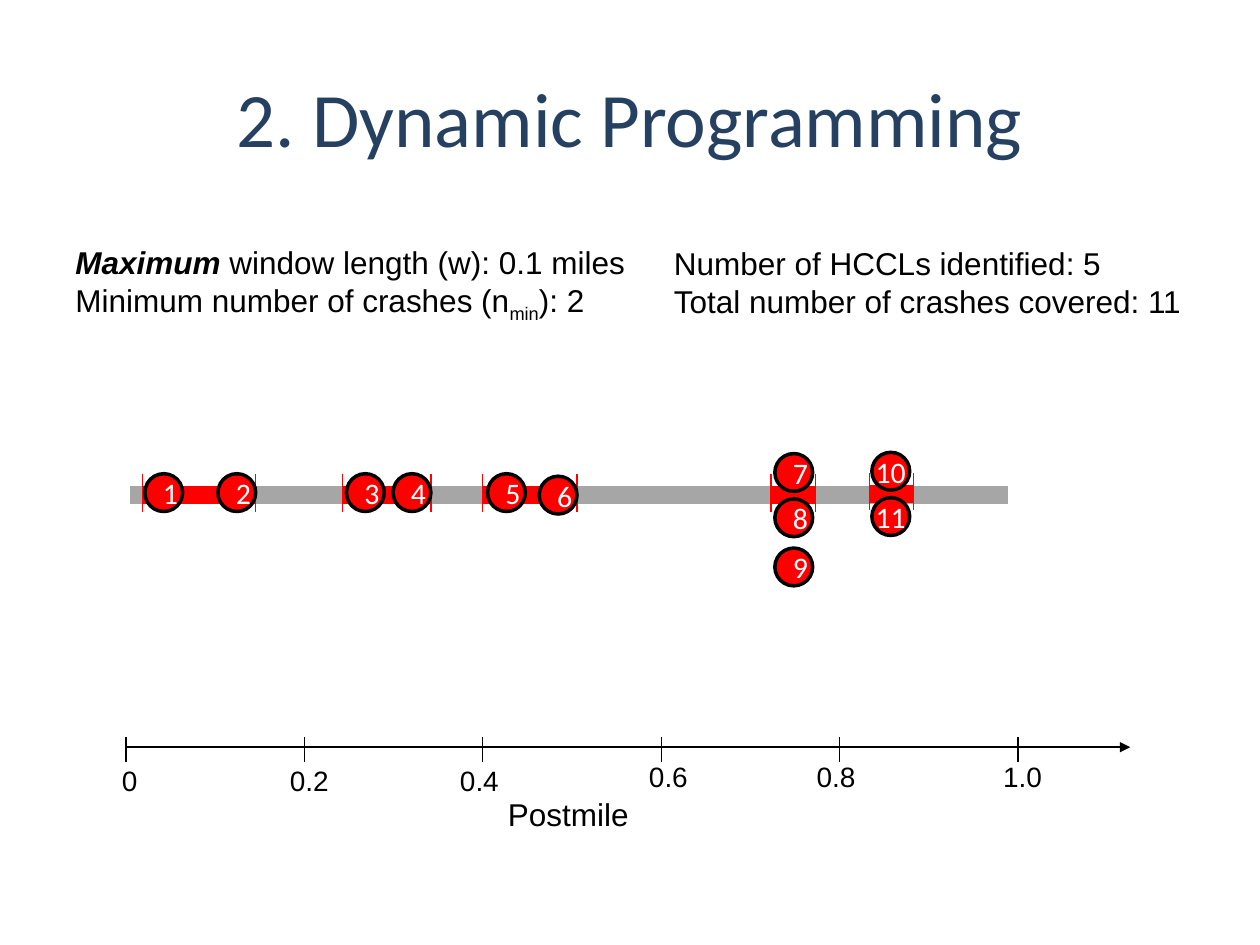
from lxml import etree
from pptx import Presentation
from pptx.dml.color import RGBColor
from pptx.enum.shapes import MSO_CONNECTOR, MSO_SHAPE
from pptx.enum.text import MSO_ANCHOR, MSO_AUTO_SIZE, PP_ALIGN
from pptx.oxml.ns import qn
from pptx.util import Inches, Pt

STRAIGHT = MSO_CONNECTOR.STRAIGHT
ELLIPSE = MSO_SHAPE.OVAL
MIDDLE = MSO_ANCHOR.MIDDLE
GROW = MSO_AUTO_SIZE.SHAPE_TO_FIT_TEXT
LEFT, CENTER = PP_ALIGN.LEFT, PP_ALIGN.CENTER

COLORS = {
    "road": "A6A6A6",
    "crash": "FF0000",
    "ink": "000000",
    "title": "254061",
    "white": "FFFFFF",
}


def add_run(paragraph, text, *, size=18, font="Arial", color="ink",
            bold=False, italic=False, baseline=None):
    """Append a formatted run; baseline is a percentage, negative for subscript."""
    run = paragraph.add_run()
    run.text = text
    run.font.name = font
    run.font.size = Pt(size)
    run.font.color.rgb = RGBColor.from_string(COLORS[color])
    run.font.bold = bold
    run.font.italic = italic
    if baseline is not None:
        run._r.get_or_add_rPr().set("baseline", str(baseline * 1000))


class PostmileSlide:
    """Holds the current slide and draws its elements in one style."""

    road_width = 10
    crash_size = 0.3

    def __init__(self, slide):
        self.slide = slide

    def line(self, start, end, color="ink", width=0.75, arrow=False, shapes=None):
        shapes = shapes or self.slide.shapes
        connector = shapes.add_connector(
            STRAIGHT, *(Inches(value) for value in (*start, *end)))
        connector.line.color.rgb = RGBColor.from_string(COLORS[color])
        connector.line.width = Pt(width)
        if arrow:
            outline = connector.line._get_or_add_ln()
            etree.SubElement(outline, qn("a:tailEnd"), type="triangle")
        etree.SubElement(connector._element.spPr, qn("a:effectLst"))

    def text(self, box, paragraphs, align=LEFT, anchor=None, **style):
        """Each paragraph is a list of (text, extra format) runs."""
        textbox = self.slide.shapes.add_textbox(*(Inches(value) for value in box))
        frame = textbox.text_frame
        frame.word_wrap = True
        if anchor is None:
            frame.auto_size = GROW
        else:
            frame.vertical_anchor = anchor
        for index, runs in enumerate(paragraphs):
            paragraph = frame.add_paragraph() if index else frame.paragraphs[0]
            paragraph.alignment = align
            for text, extra in runs:
                add_run(paragraph, text, **{**style, **extra})

    def window(self, left, right, y, tick_top):
        """Draw a red road section between two vertical limits."""
        shapes = self.slide.shapes.add_group_shape().shapes
        self.line((left, y), (right, y), "crash", self.road_width, shapes=shapes)
        for x in (left, right):
            self.line((x, tick_top), (x, tick_top + 0.3), "crash", shapes=shapes)

    def crash(self, number, left, top):
        size = Inches(self.crash_size)
        circle = self.slide.shapes.add_shape(
            ELLIPSE, Inches(left), Inches(top), size, size)
        circle.shadow.inherit = False
        circle.fill.solid()
        circle.fill.fore_color.rgb = RGBColor.from_string(COLORS["crash"])
        circle.line.color.rgb = RGBColor.from_string(COLORS["ink"])
        circle.line.width = Pt(2)
        frame = circle.text_frame
        frame.word_wrap = number < 10
        frame.vertical_anchor = MIDDLE
        paragraph = frame.paragraphs[0]
        paragraph.alignment = CENTER
        add_run(paragraph, str(number), size=17, font="Calibri", color="white")


def main():
    presentation = Presentation()
    presentation.slide_width = Inches(10)
    presentation.slide_height = Inches(7.5)
    page = PostmileSlide(
        presentation.slides.add_slide(presentation.slide_layouts[6]))

    page.text((0.5, 0.3, 9, 1.25), [[("2. Dynamic Programming", {})]],
              align=CENTER, anchor=MIDDLE, size=44, font="Calibri", color="title")
    page.text((0.5, 1.88, 4.8, 0.71), [
        [("Maximum", {"bold": True, "italic": True}),
         (" window length (w): 0.1 miles", {})],
        [("Minimum number of crashes (n", {}), ("min", {"baseline": -25}),
         ("): 2", {})],
    ])
    page.text((5.25, 1.89, 4.25, 0.71), [
        [("Number of HCCLs identified: 5", {})],
        [("Total number of crashes covered: 11", {})],
    ])

    road_y = 3.93
    page.line((1.03, road_y), (8, road_y), "road", page.road_width)
    windows = [(1.13, 2.03, road_y, 3.76), (2.72, 3.42, road_y, 3.76),
               (3.83, 4.58, road_y, 3.76), (6.12, 6.47, road_y, 3.76),
               (6.9, 7.25, 3.92, 3.75)]
    for window in windows:
        page.window(*window)

    crashes = [(1.15, 3.76), (1.73, 3.76), (2.75, 3.76), (3.12, 3.76),
               (3.87, 3.76), (4.28, 3.78), (6.15, 3.6), (6.15, 3.96),
               (6.15, 4.35), (6.92, 3.59), (6.92, 3.95)]
    for number, position in enumerate(crashes, start=1):
        page.crash(number, *position)

    axis_y, axis_left, tick_count = 5.93, 1, 6
    tick_gap = 7.08 / (tick_count - 1)
    page.line((axis_left, axis_y), (8.97, axis_y), width=1.5, arrow=True)
    for index in range(tick_count):
        x = axis_left + index * tick_gap
        page.line((x, 5.85), (x, 6.05))

    postmiles = [("0", 0.83, 6.01, 0.4), ("0.2", 2.17, 6.01, 0.57),
                 ("0.4", 3.52, 6.01, 0.57), ("0.6", 5.02, 5.98, 0.57),
                 ("0.8", 6.35, 5.98, 0.57), ("1.0", 7.83, 5.98, 0.57)]
    for postmile, left, top, width in postmiles:
        page.text((left, top, width, 0.37), [[(postmile, {})]],
                  align=CENTER, size=16)
    page.text((2.52, 6.26, 3.98, 0.4), [[("Postmile", {})]], align=CENTER)

    presentation.save("out.pptx")


if __name__ == "__main__":
    main()
